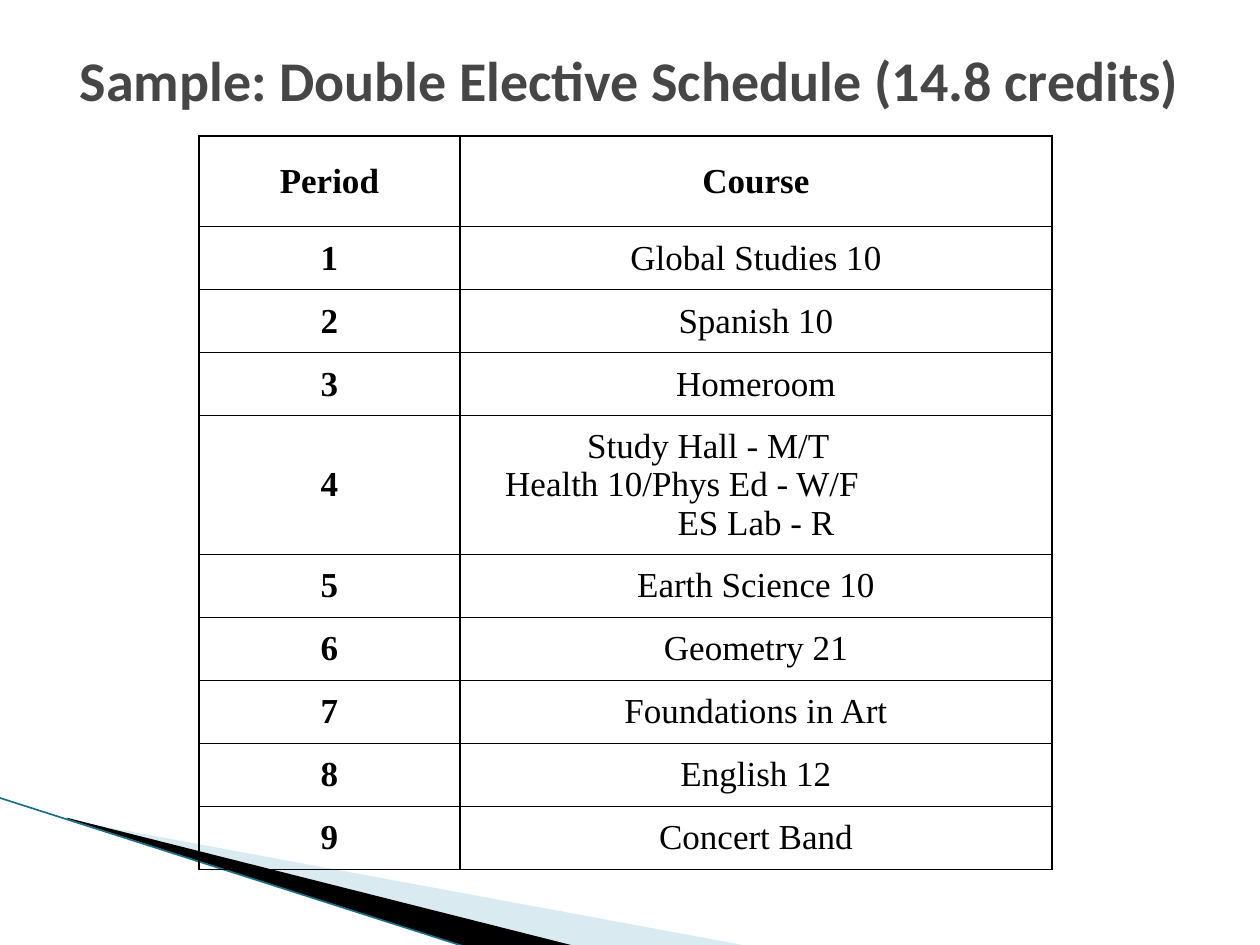
import pptx
import pptx.util
import pptx.dml.color
import pptx.enum.shapes
import pptx.enum.text
import pptx.oxml
import pptx.oxml.ns

Inches = pptx.util.Inches
Pt = pptx.util.Pt
RGBColor = pptx.dml.color.RGBColor
ALIGN = pptx.enum.text.PP_ALIGN
MIDDLE = pptx.enum.text.MSO_ANCHOR.MIDDLE

BLACK = RGBColor(0x00, 0x00, 0x00)
TITLE_GRAY = RGBColor(0x46, 0x46, 0x46)
PALE_BLUE = RGBColor(0xA0, 0xCB, 0xDC)
TEAL = RGBColor(0x1C, 0x6F, 0x86)


def add_span(para, text, font, size, color, bold):
    span = para.add_run()
    span.text = text
    span.font.name = font
    span.font.size = Pt(size)
    span.font.color.rgb = color
    span.font.bold = bold


def add_border(cell):
    properties = cell._tc.get_or_add_tcPr()
    for position, side in enumerate(("lnL", "lnR", "lnT", "lnB")):
        properties.insert(position, pptx.oxml.parse_xml(
            f'<a:{side} {pptx.oxml.ns.nsdecls("a")} w="{Pt(1)}"><a:solidFill>'
            f'<a:srgbClr val="{BLACK}"/></a:solidFill></a:{side}>'))


deck = pptx.Presentation()
deck.slide_width = Inches(10)
deck.slide_height = Inches(7.5)
page = deck.slides.add_slide(deck.slide_layouts[6])

# Corner wedges
wedges = [
    (PALE_BLUE, 40, [(0.55, 6.51), (5.95, 7.51), (4.56, 7.51), (0.55, 6.5)]),
    (BLACK, 100, [(0.53, 6.49), (4.57, 7.51), (3.72, 7.52), (0.54, 6.5)]),
]
for color, opacity, points in wedges:
    corners = [(Inches(x), Inches(y)) for x, y in points]
    builder = page.shapes.build_freeform(*corners[0])
    builder.add_line_segments(corners[1:], close=True)
    wedge = builder.convert_to_shape()
    wedge.shadow.inherit = False
    wedge.fill.solid()
    wedge.fill.fore_color.rgb = color
    wedge.line.fill.background()
    if opacity < 100:
        color_node = wedge._element.spPr.find(".//" + pptx.oxml.ns.qn("a:srgbClr"))
        color_node.append(pptx.oxml.parse_xml(
            f'<a:alpha {pptx.oxml.ns.nsdecls("a")} val="{opacity * 1000}"/>'))

# Edge line along the wedges
edge = page.shapes.add_connector(
    pptx.enum.shapes.MSO_CONNECTOR.STRAIGHT,
    Inches(-0.01), Inches(6.33), Inches(3.71), Inches(7.52))
edge.line.color.rgb = TEAL
edge.line.width = Pt(0.95)
edge._element.spPr.append(
    pptx.oxml.parse_xml(f'<a:effectLst {pptx.oxml.ns.nsdecls("a")}/>'))

# Schedule table: each line of a course is (text, left indent or None if centred)
schedule = [
    ("Period", [("Course", None)]),
    ("1", [("Global Studies 10", None)]),
    ("2", [("Spanish 10", None)]),
    ("3", [("Homeroom", None)]),
    ("4", [("Study Hall - M/T", 0.83), ("Health 10/Phys Ed - W/F", 0.18),
           ("ES Lab - R", None)]),
    ("5", [("Earth Science 10", None)]),
    ("6", [("Geometry 21", None)]),
    ("7", [("Foundations in Art", None)]),
    ("8", [("English 12", None)]),
    ("9", [("Concert Band", None)]),
]
row_heights = {0: 0.72, 4: 1.1}
table = page.shapes.add_table(
    len(schedule), 2, Inches(1.58), Inches(1.08), Inches(6.77), Inches(5.82)).table
table.first_row = False
table.horz_banding = False
table.columns[0].width = Inches(2.07)
table.columns[1].width = Inches(4.7)

for row, (period, course) in enumerate(schedule):
    table.rows[row].height = Inches(row_heights.get(row, 0.5))
    for column, lines in enumerate(([(period, None)], course)):
        cell = table.cell(row, column)
        cell.fill.background()
        add_border(cell)
        cell.vertical_anchor = MIDDLE
        cell.margin_left = cell.margin_right = Inches(0.18)
        cell.margin_top = cell.margin_bottom = Inches(0.05)
        for number, (text, indent) in enumerate(lines):
            frame = cell.text_frame
            para = frame.add_paragraph() if number else frame.paragraphs[0]
            para.alignment = ALIGN.CENTER
            if indent is not None:
                para.alignment = ALIGN.LEFT
                para._p.get_or_add_pPr().set("marL", str(Inches(indent)))
            add_span(para, text, "Times New Roman", 20, BLACK,
                     row == 0 or column == 0)

# Title
box = page.shapes.add_textbox(Inches(0.5), Inches(0), Inches(9), Inches(1.25))
box.text_frame.word_wrap = True
box.text_frame.vertical_anchor = MIDDLE
para = box.text_frame.paragraphs[0]
para.alignment = ALIGN.CENTER
add_span(para, "Sample: Double Elective Schedule (14.8 credits)",
         "Calibri", 32, TITLE_GRAY, True)

deck.save("out.pptx")
